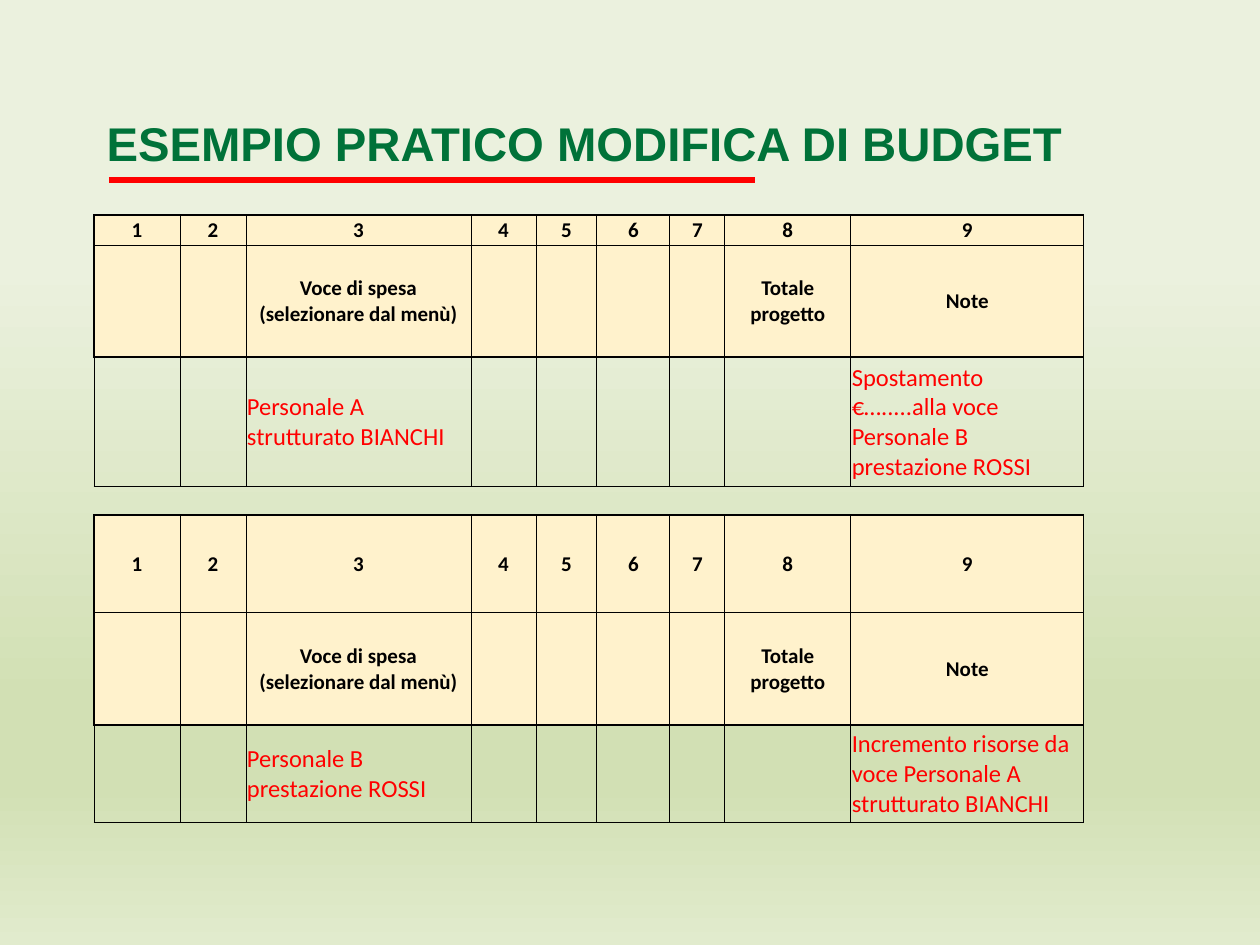
import pptx
import pptx.util
import pptx.dml.color
import pptx.enum.shapes
import pptx.enum.text
import pptx.oxml
import pptx.oxml.ns
import lxml.etree

# Content
TITLE = "ESEMPIO PRATICO MODIFICA DI BUDGET"
NUMBERS = [str(number) for number in range(1, 10)]
LABELS = ["", "", "Voce di spesa (selezionare dal menù)", "", "", "", "",
          "Totale progetto", "Note"]


def entry(item, note):
    return ["", "", item, "", "", "", "", "", note]


# Each row: kind, height in px, cell texts
ROWS = [
    ("numbers", 30, NUMBERS),
    ("labels", 112, LABELS),
    ("entry", 130, entry("Personale A strutturato BIANCHI",
                         "Spostamento €….....alla voce Personale B prestazione ROSSI")),
    ("spacer", 28, [""] * 9),
    ("numbers", 98, NUMBERS),
    ("labels", 112, LABELS),
    ("entry", 98, entry("Personale B prestazione ROSSI",
                        "Incremento risorse da voce Personale A strutturato BIANCHI")),
]
COLUMN_WIDTHS = [86, 66, 225, 65, 61, 73, 55, 126, 233]
BACKGROUND_STOPS = [(28, "EBF1DE"), (74, "D2E0B4"), (83, "D2E0B4"), (100, "E1EBCD")]
HEADER_FILL, BLACK, RED, GREEN = "FFF2CC", "000000", "FF0000", "007239"
NO_STYLE = "{2D5ABB26-0587-4C30-8999-92F81FD0307C}"
qn = pptx.oxml.ns.qn


def px(length):
    return pptx.util.Emu(round(length * 914400 / 126))


def color(value):
    return pptx.dml.color.RGBColor.from_string(value)


def set_font(paragraph, name, size, value, bold):
    font = paragraph.font
    font.name, font.size, font.bold = name, pptx.util.Pt(size), bold
    font.color.rgb = color(value)


def edge_widths(kind, column):
    """Border widths in points, in the order the table format wants."""
    header = kind in ("numbers", "labels")
    if kind == "spacer":
        return {"L": 0, "R": 0, "T": 0.5, "B": 1}
    return {"L": 1 if header and column == 0 else 0.5,
            "R": 1 if header and column == 8 else 0.5,
            "T": 1 if kind == "numbers" else 0.5,
            "B": 1 if kind == "labels" else 0.5}


def set_borders(cell, widths):
    properties = cell._tc.get_or_add_tcPr()
    for index, (side, width) in enumerate(widths.items()):
        line = lxml.etree.Element(qn(f"a:ln{side}"), w=str(pptx.util.Pt(width)))
        if width:
            fill = lxml.etree.SubElement(line, qn("a:solidFill"))
            lxml.etree.SubElement(fill, qn("a:srgbClr"), val=BLACK)
        else:
            lxml.etree.SubElement(line, qn("a:noFill"))
        properties.insert(index, line)


def format_cell(cell, kind, column, text):
    header = kind in ("numbers", "labels")
    cell.text = text
    cell.vertical_anchor = pptx.enum.text.MSO_ANCHOR.MIDDLE
    cell.margin_left = cell.margin_right = cell.margin_top = px(1)
    cell.margin_bottom = 0
    paragraph = cell.text_frame.paragraphs[0]
    if header:
        paragraph.alignment = pptx.enum.text.PP_ALIGN.CENTER
        set_font(paragraph, "Calibri", 12, BLACK, True)
        cell.fill.solid()
        cell.fill.fore_color.rgb = color(HEADER_FILL)
    else:
        set_font(paragraph, "Calibri", 14 if text else 10, RED, False)
        cell.fill.background()
    set_borders(cell, edge_widths(kind, column))


presentation = pptx.Presentation()
presentation.slide_width, presentation.slide_height = px(1260), px(945)
slide = presentation.slides.add_slide(presentation.slide_layouts[0])
subtitle = slide.placeholders[1]._element
subtitle.getparent().remove(subtitle)

# Background gradient, top to bottom
background = slide.background.fill
background.gradient()
background.gradient_angle = 270
stops = slide._element.find(".//" + qn("a:gsLst"))
for stop in list(stops):
    stops.remove(stop)
for position, value in BACKGROUND_STOPS:
    stop = lxml.etree.SubElement(stops, qn("a:gs"), pos=str(position * 1000))
    lxml.etree.SubElement(stop, qn("a:srgbClr"), val=value)

# Title
title = slide.shapes.title
title.left, title.top, title.width, title.height = px(94), px(91), px(1071), px(103)
title.text = TITLE
title.text_frame.auto_size = pptx.enum.text.MSO_AUTO_SIZE.NONE
title.text_frame.vertical_anchor = pptx.enum.text.MSO_ANCHOR.MIDDLE
heading = title.text_frame.paragraphs[0]
heading.alignment = pptx.enum.text.PP_ALIGN.LEFT
set_font(heading, "Arial", 27, GREEN, True)

# Budget table
frame = slide.shapes.add_table(
    len(ROWS), len(COLUMN_WIDTHS), px(94), px(215),
    px(sum(COLUMN_WIDTHS)), px(sum(height for _, height, _ in ROWS)))
table = frame.table
table.first_row = table.horz_banding = False
table._tbl.find(".//" + qn("a:tableStyleId")).text = NO_STYLE
for column, width in enumerate(COLUMN_WIDTHS):
    table.columns[column].width = px(width)
for row, (kind, height, texts) in enumerate(ROWS):
    table.rows[row].height = px(height)
    for column, text in enumerate(texts):
        format_cell(table.cell(row, column), kind, column, text)

# Red rule under the title
rule = slide.shapes.add_connector(
    pptx.enum.shapes.MSO_CONNECTOR.STRAIGHT, px(109), px(180), px(755), px(180))
rule.line.color.rgb = color(RED)
rule.line.width = pptx.util.Pt(3)
lxml.etree.SubElement(rule._element.spPr, qn("a:effectLst"))

presentation.save("out.pptx")
